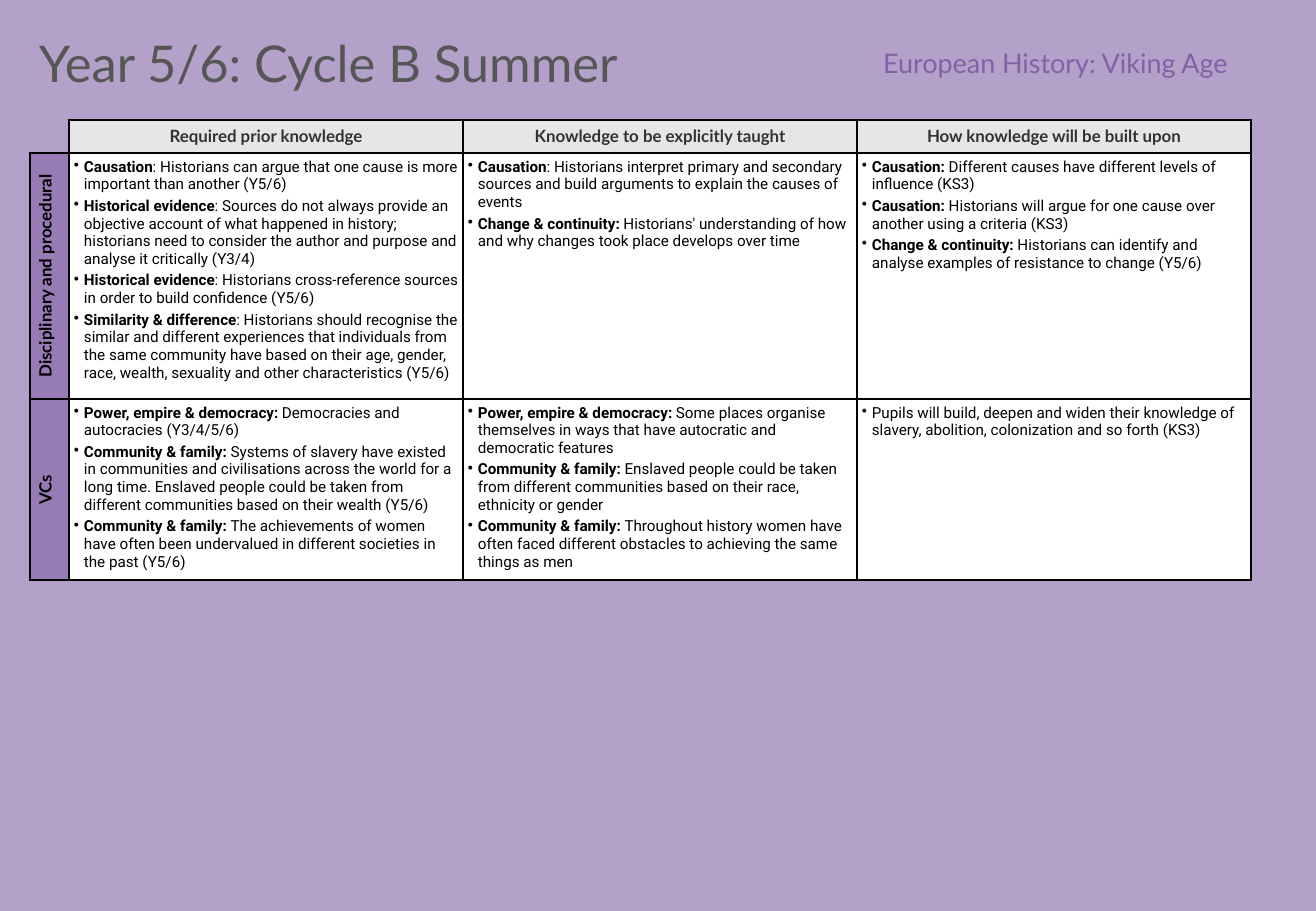
from lxml.etree import SubElement
from pptx import Presentation
from pptx.dml.color import RGBColor as RGB
from pptx.enum.text import MSO_ANCHOR as Anchor, PP_ALIGN as Align
from pptx.oxml import parse_xml
from pptx.oxml.ns import qn, nsdecls
from pptx.util import Pt

HEX = {"back": "B4A1CA", "title": "565656", "topic": "8262A6", "head": "323232",
       "grey": "E6E6E6", "white": "FFFFFF", "black": "000000"}
TITLES = [
    ("Year 5/6: Cycle B Summer", (27, 32, 835, 61), 30, "title", Align.LEFT),
    ("European History: Viking Age", (631, 32, 609, 61), 16, "topic", Align.RIGHT),
]
HEADS = ["Required prior knowledge", "Knowledge to be explicitly taught",
         "How knowledge will be built upon"]
ROWS = [
    ("Disciplinary and procedural", [
        [("Causation", ": Historians can argue that one cause is more important than another (Y5/6)"),
         ("Historical evidence", ": Sources do not always provide an objective account of what happened "
          "in history; historians need to consider the author and purpose and analyse it critically (Y3/4)"),
         ("Historical evidence", ": Historians cross-reference sources in order to build confidence (Y5/6)"),
         ("Similarity & difference", ": Historians should recognise the similar and different experiences "
          "that individuals from the same community have based on their age, gender, race, wealth, "
          "sexuality and other characteristics (Y5/6)")],
        [("Causation", ": Historians interpret primary and secondary sources and build arguments "
          "to explain the causes of events"),
         ("Change & continuity: ", "Historians' understanding of how and why changes took place "
          "develops over time")],
        [("Causation: ", "Different causes have different levels of influence (KS3)"),
         ("Causation: ", "Historians will argue for one cause over another using a criteria (KS3)"),
         ("Change & continuity: ", "Historians can identify and analyse examples of resistance "
          "to change (Y5/6)")],
    ]),
    ("VCs", [
        [("Power, empire & democracy: ", "Democracies and autocracies (Y3/4/5/6)"),
         ("Community & family: ", "Systems of slavery have existed in communities and civilisations "
          "across the world for a long time. Enslaved people could be taken from different "
          "communities based on their wealth (Y5/6)"),
         ("Community & family: ", "The achievements of women have often been undervalued in "
          "different societies in the past (Y5/6)")],
        [("Power, empire & democracy: ", "Some places organise themselves in ways that have "
          "autocratic and democratic features"),
         ("Community & family: ", "Enslaved people could be taken from different communities "
          "based on their race, ethnicity or gender"),
         ("Community & family: ", "Throughout history women have often faced different obstacles "
          "to achieving the same things as men")],
        [("", "Pupils will build, deepen and widen their knowledge of slavery, abolition, "
          "colonization and so forth (KS3)")],
    ]),
]
WIDTHS = [39, 394, 394, 394]
HEIGHTS = [33, 246, 181]
LEFT, TOP = 30, 120
INSET, INDENT = 5, 10
SCALE = 7526


def px(n):
    return n * SCALE


def style(par, size, face, tint, bold=False):
    font = par.font
    font.size, font.name, font.bold = Pt(size), face, bold
    font.color.rgb = RGB.from_string(HEX[tint])


def edge(cell, sides):
    props = cell._tc.get_or_add_tcPr()
    for spot, side in enumerate("LRTB"):
        paint = (f'<a:solidFill><a:srgbClr val="{HEX["black"]}"/></a:solidFill>'
                 if side in sides else "<a:noFill/>")
        props.insert(spot, parse_xml(f'<a:ln{side} {nsdecls("a")} w="12700">{paint}</a:ln{side}>'))


def dress(cell, tint, sides="LRTB"):
    cell.margin_left = cell.margin_right = px(INSET)
    cell.margin_top = cell.margin_bottom = px(INSET)
    if tint:
        cell.fill.solid()
        cell.fill.fore_color.rgb = RGB.from_string(HEX[tint])
    else:
        cell.fill.background()
    edge(cell, sides)


def label(cell, text, tint, ink):
    dress(cell, tint)
    cell.vertical_anchor = Anchor.MIDDLE
    par = cell.text_frame.paragraphs[0]
    par.text, par.alignment = text, Align.CENTER
    style(par, 10, "Lato", ink, True)


def points(cell, items):
    dress(cell, "white")
    frame = cell.text_frame
    for i, (term, rest) in enumerate(items):
        par = frame.add_paragraph() if i else frame.paragraphs[0]
        props = par._p.get_or_add_pPr()
        props.set("marL", str(px(INDENT)))
        props.set("indent", str(-px(INDENT)))
        SubElement(props, qn("a:buChar")).set("char", "•")
        par.space_after = Pt(2)
        style(par, 9, "Roboto", "black")
        if term:
            run = par.add_run()
            run.text, run.font.bold = term, True
        par.add_run().text = rest


deck = Presentation()
deck.slide_width, deck.slide_height = px(1316), px(911)
slide = deck.slides.add_slide(deck.slide_layouts[6])
slide.background.fill.solid()
slide.background.fill.fore_color.rgb = RGB.from_string(HEX["back"])

for text, box, size, tint, align in TITLES:
    frame = slide.shapes.add_textbox(*map(px, box)).text_frame
    frame.word_wrap, frame.vertical_anchor = True, Anchor.MIDDLE
    par = frame.paragraphs[0]
    par.text, par.alignment = text, align
    style(par, size, "Lato", tint)

table = slide.shapes.add_table(len(HEIGHTS), len(WIDTHS), px(LEFT), px(TOP),
                               px(sum(WIDTHS)), px(sum(HEIGHTS))).table
table.first_row = table.horz_banding = False
for col, wide in zip(table.columns, WIDTHS):
    col.width = px(wide)
for row, high in zip(table.rows, HEIGHTS):
    row.height = px(high)

blank = table.cell(0, 0)
dress(blank, None, "RB")
SubElement(blank.text_frame.paragraphs[0]._p, qn("a:endParaRPr")).set("sz", "1000")
for c, head in enumerate(HEADS, 1):
    label(table.cell(0, c), head, "grey", "head")
for r, (name, lists) in enumerate(ROWS, 1):
    side = table.cell(r, 0)
    label(side, name, "topic", "black")
    props = side._tc.tcPr
    props.set("vert", "vert270")
    shade = props.find(qn("a:solidFill")).find(qn("a:srgbClr"))
    SubElement(shade, qn("a:alpha")).set("val", "60000")
    for c, items in enumerate(lists, 1):
        points(table.cell(r, c), items)

deck.save("out.pptx")
